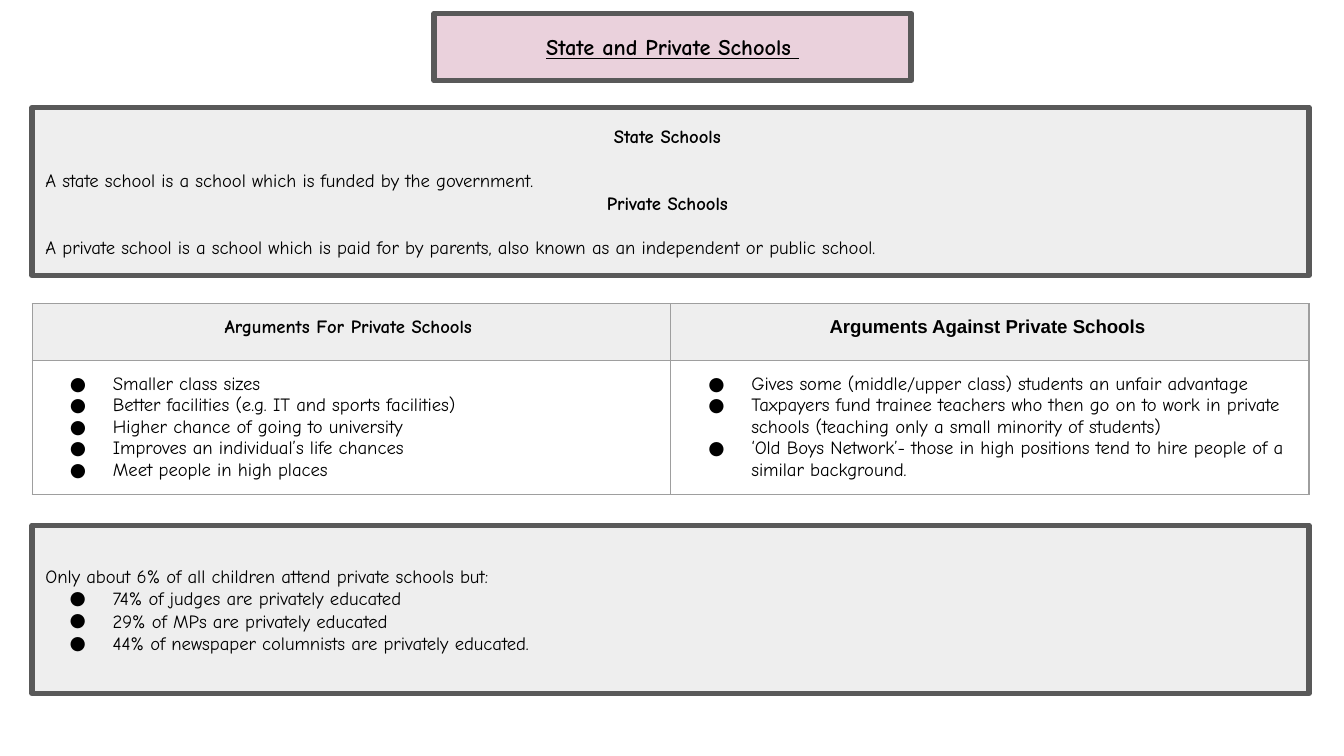
from lxml import etree
from pptx import Presentation
from pptx.dml.color import RGBColor
from pptx.enum import shapes, text
from pptx.oxml import ns
from pptx.util import Inches, Pt

BLACK = RGBColor(0x00, 0x00, 0x00)
PINK = RGBColor(0xEA, 0xD1, 0xDC)
PALE_GREY = RGBColor(0xEE, 0xEE, 0xEE)
DARK_GREY = RGBColor(0x59, 0x59, 0x59)
BORDER_GREY = RGBColor(0x9E, 0x9E, 0x9E)
FONT = "Comic Neue"
LEFT, WIDTH = 0.24, 9.5

DEFINITIONS = [
    ("State Schools ", "A state school is a school which is funded by the government."),
    ("Private Schools ", "A private school is a school which is paid for by parents, "
                         "also known as an independent or public school."),
]
ARGUMENTS = [
    ("Arguments For Private Schools ", FONT, [
        "Smaller class sizes",
        "Better facilities (e.g. IT and sports facilities)",
        "Higher chance of going to university",
        "Improves an individual’s life chances",
        "Meet people in high places",
    ]),
    ("Arguments Against Private Schools ", "Arial", [
        "Gives some (middle/upper class) students an unfair advantage",
        "Taxpayers fund trainee teachers who then go on to work in private schools "
        "(teaching only a small minority of students)",
        "‘Old Boys Network’- those in high positions tend to hire people of a "
        "similar background.",
    ]),
]
FACTS_INTRO = "Only about 6% of all children attend private schools but:"
FACTS = [
    "74% of judges are privately educated",
    "29% of MPs are privately educated",
    "44% of newspaper columnists are privately educated.",
]


def set_margins(holder):
    """Give a text frame or a table cell the same inset on every side."""
    for side in ("left", "right", "top", "bottom"):
        setattr(holder, f"margin_{side}", Inches(0.1))


def add_box(page, left, top, width, height, fill):
    box = page.shapes.add_shape(shapes.MSO_SHAPE.RECTANGLE, Inches(left), Inches(top),
                                Inches(width), Inches(height))
    box.shadow.inherit = False
    box.fill.solid()
    box.fill.fore_color.rgb = fill
    box.line.color.rgb = DARK_GREY
    box.line.width = Pt(3)
    frame = box.text_frame
    frame.word_wrap = True
    frame.vertical_anchor = text.MSO_ANCHOR.MIDDLE
    set_margins(frame)
    return frame


def write(frame, line, size=10, font=FONT, heading=False):
    """Fill the empty first paragraph, or append one; headings are bold and centred."""
    para = frame.paragraphs[0] if not frame.text else frame.add_paragraph()
    para.text = line
    para.alignment = text.PP_ALIGN.CENTER if heading else text.PP_ALIGN.LEFT
    span = para.runs[0].font
    span.size, span.name, span.bold = Pt(size), font, heading
    span.color.rgb = BLACK
    return para


def write_bullets(frame, lines):
    for line in lines:
        props = write(frame, line)._p.get_or_add_pPr()
        props.set("marL", str(Inches(0.5)))
        props.set("indent", str(Inches(-0.32)))
        colour = etree.SubElement(props, ns.qn("a:buClr"))
        etree.SubElement(colour, ns.qn("a:srgbClr"), val=str(BLACK))
        etree.SubElement(props, ns.qn("a:buSzPts"), val="1000")
        etree.SubElement(props, ns.qn("a:buFont"), typeface=FONT)
        etree.SubElement(props, ns.qn("a:buChar"), char="●")


def style_cell(cell, fill=None):
    set_margins(cell)
    props = cell._tc.get_or_add_tcPr()
    for edge in ("lnL", "lnR", "lnT", "lnB"):
        line = etree.SubElement(props, ns.qn(f"a:{edge}"), w=str(Pt(0.75)))
        paint = etree.SubElement(line, ns.qn("a:solidFill"))
        etree.SubElement(paint, ns.qn("a:srgbClr"), val=str(BORDER_GREY))
    if fill is None:
        cell.fill.background()
    else:
        cell.fill.solid()
        cell.fill.fore_color.rgb = fill


def add_title(page):
    frame = add_box(page, 3.23, 0.1, 3.55, 0.5, PINK)
    write(frame, "State and Private Schools ", 12, heading=True).runs[0].font.underline = True


def add_definitions(page):
    frame = add_box(page, LEFT, 0.8, WIDTH, 1.25, PALE_GREY)
    for term, meaning in DEFINITIONS:
        write(frame, term, heading=True)
        write(frame, meaning).space_before = Pt(12)
    for para in frame.paragraphs:
        para.line_spacing = Pt(12)


def add_arguments(page):
    table = page.shapes.add_table(2, len(ARGUMENTS), Inches(LEFT), Inches(2.26),
                                  Inches(WIDTH), Inches(1.42)).table
    table.first_row = table.horz_banding = False
    table.rows[0].height = Inches(0.42)
    table.rows[1].height = Inches(1)
    for column, (heading, font, points) in enumerate(ARGUMENTS):
        head, body = table.cell(0, column), table.cell(1, column)
        style_cell(head, PALE_GREY)
        style_cell(body)
        write(head.text_frame, heading, font=font, heading=True)
        write_bullets(body.text_frame, points)


def add_facts(page):
    frame = add_box(page, LEFT, 3.91, WIDTH, 1.25, PALE_GREY)
    write(frame, FACTS_INTRO)
    write_bullets(frame, FACTS)
    for para in frame.paragraphs:
        para.line_spacing = Pt(12)


def main():
    deck = Presentation()
    deck.slide_width = Inches(10)
    deck.slide_height = deck.slide_width * 9 // 16
    page = deck.slides.add_slide(deck.slide_layouts[6])
    add_title(page)
    add_definitions(page)
    add_arguments(page)
    add_facts(page)
    deck.save("out.pptx")


if __name__ == "__main__":
    main()
